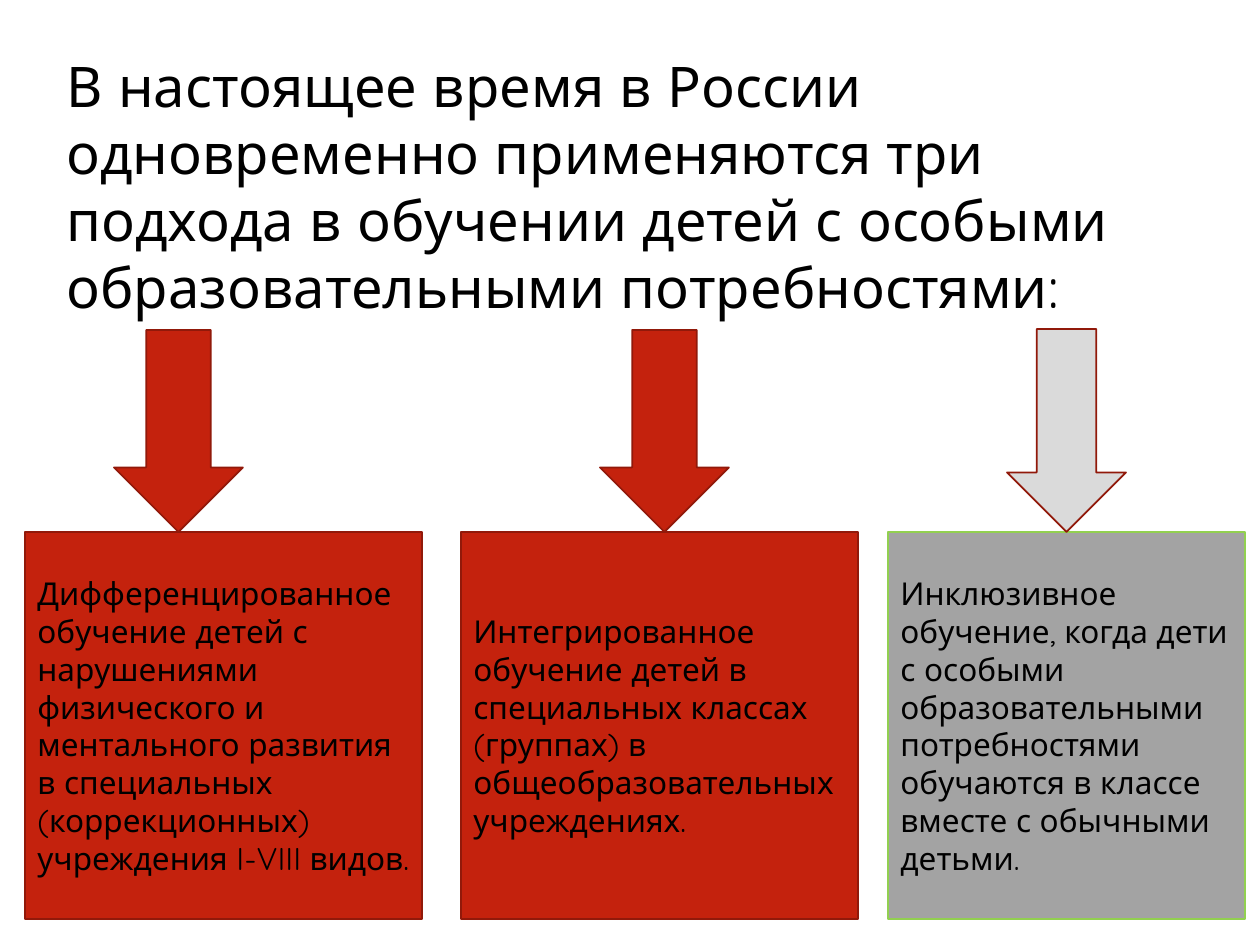
"""Build a slide with three approaches to teaching, each under an arrow."""
from dataclasses import dataclass

from pptx import Presentation
from pptx.dml.color import RGBColor
from pptx.enum.shapes import MSO_SHAPE as SHAPE
from pptx.enum.text import MSO_ANCHOR as ANCHOR, MSO_AUTO_SIZE as AUTO, PP_ALIGN as ALIGN
from pptx.util import Emu, Pt

PX_PER_INCH = 126
FONT = "Quicksand"
COLORS = {
    "text": "000000",
    "red": "C4220D",
    "dark_red": "91190A",
    "gray": "A3A3A3",
    "light_gray": "DADADA",
    "green": "92D050",
}
TITLE = (
    "В настоящее время в России одновременно применяются три подхода "
    "в обучении детей с особыми образовательными потребностями:"
)
BOX_TOP, BOX_HEIGHT = 532, 387


@dataclass(frozen=True)
class Approach:
    text: str
    left: int
    width: int
    fill: str
    line: str
    arrow_left: int
    arrow_top: int
    arrow_width: int
    arrow_fill: str


APPROACHES = [
    Approach(
        "Инклюзивное обучение, когда дети с особыми образовательными "
        "потребностями обучаются в классе вместе с обычными детьми.",
        888, 357, "gray", "green", 1007, 329, 119, "light_gray",
    ),
    Approach(
        "Интегрированное обучение детей в специальных классах (группах) "
        "в общеобразовательных учреждениях.",
        461, 397, "red", "dark_red", 600, 330, 129, "red",
    ),
    Approach(
        "Дифференцированное обучение детей с нарушениями физического и "
        "ментального развития в специальных (коррекционных) учреждения "
        "I-VIII видов.",
        25, 397, "red", "dark_red", 114, 330, 129, "red",
    ),
]


def px(n: int) -> Emu:
    """Turn pixels into EMU."""
    return Emu(round(n * 914400 / PX_PER_INCH))


def rgb(name: str) -> RGBColor:
    """Look up a named colour."""
    return RGBColor.from_string(COLORS[name])


def add_text(tf, text: str, size: int) -> None:
    """Write one left-aligned run into a text frame."""
    tf.word_wrap = True
    p = tf.paragraphs[0]
    p.alignment = ALIGN.LEFT
    r = p.add_run()
    r.text = text
    r.font.name = FONT
    r.font.size = Pt(size)
    r.font.color.rgb = rgb("text")


def add_block(s, kind, left: int, top: int, width: int, height: int, fill: str, line: str):
    """Add a filled and outlined preset shape."""
    sp = s.shapes.add_shape(kind, px(left), px(top), px(width), px(height))
    sp.shadow.inherit = False
    sp.fill.solid()
    sp.fill.fore_color.rgb = rgb(fill)
    sp.line.color.rgb = rgb(line)
    sp.line.width = Pt(1)
    return sp


def add_box(s, a: Approach) -> None:
    """Draw the box that describes an approach."""
    sp = add_block(s, SHAPE.RECTANGLE, a.left, BOX_TOP, a.width, BOX_HEIGHT, a.fill, a.line)
    sp.text_frame.vertical_anchor = ANCHOR.MIDDLE
    add_text(sp.text_frame, a.text, 18)


def add_arrow(s, a: Approach) -> None:
    """Draw the arrow that ends on an approach's box."""
    add_block(s, SHAPE.DOWN_ARROW, a.arrow_left, a.arrow_top, a.arrow_width,
              BOX_TOP - a.arrow_top, a.arrow_fill, "dark_red")


def add_title(s) -> None:
    """Draw the heading."""
    tf = s.shapes.add_textbox(px(54), px(45), px(1121), px(285)).text_frame
    add_text(tf, TITLE, 32)
    tf.auto_size = AUTO.SHAPE_TO_FIT_TEXT


def main() -> None:
    """Build and save the slide."""
    prs = Presentation()
    prs.slide_width, prs.slide_height = px(1260), px(945)
    s = prs.slides.add_slide(prs.slide_layouts[6])
    for a in APPROACHES:
        add_box(s, a)
    add_title(s)
    for a in reversed(APPROACHES):
        add_arrow(s, a)
    prs.save("out.pptx")


if __name__ == "__main__":
    main()
